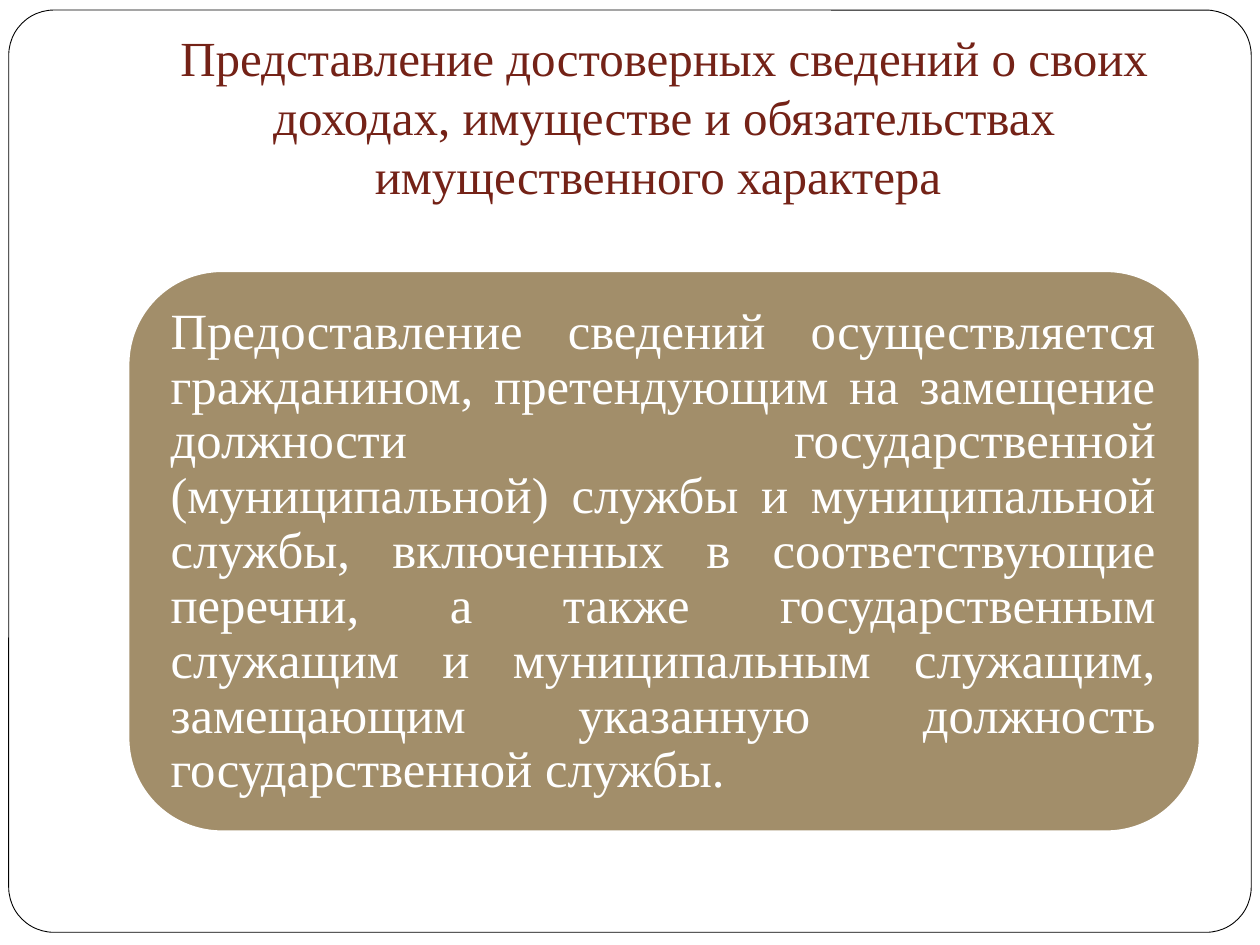
"""Build a slide on reporting income, property and liabilities."""
from pptx import Presentation
from pptx.dml.color import RGBColor
from pptx.enum import shapes, text
from pptx.util import Pt

FONT = "Times New Roman"


def color(code):
    return RGBColor.from_string(code)


def write(frame, words, size, ink, align, anchor, pads, lead=None, after=0):
    frame.word_wrap = True
    frame.auto_size = text.MSO_AUTO_SIZE.NONE
    frame.vertical_anchor = anchor
    frame.margin_left, frame.margin_top, frame.margin_right, frame.margin_bottom = map(Pt, pads)
    para = frame.paragraphs[0]
    para.alignment = align
    para.space_after = Pt(after)
    if lead:
        para.line_spacing = lead
    run = para.add_run()
    run.text = words
    run.font.name = FONT
    run.font.size = Pt(size)
    run.font.color.rgb = color(ink)


deck = Presentation()
deck.slide_width, deck.slide_height = Pt(720), Pt(540)
slide = deck.slides.add_slide(deck.slide_layouts[5])
title = slide.shapes.title

panels = [
    ((5, 5.75, 710, 527), 0.049, "FFFFFF", "000000", 0.5),
    ((73.5, 155, 612, 320), 0.1667, "A28E6A", "FFFFFF", 1),
]
for box, curve, fill, edge, width in panels:
    panel = slide.shapes.add_shape(shapes.MSO_SHAPE.ROUNDED_RECTANGLE, *map(Pt, box))
    panel.adjustments[0] = curve
    panel.shadow.inherit = False
    panel.fill.solid()
    panel.fill.fore_color.rgb = color(fill)
    panel.line.color.rgb = color(edge)
    panel.line.width = Pt(width)

tree = title.element.getparent()
tree.remove(title.element)
tree.insert(3, title.element)

title.left, title.top, title.width, title.height = map(Pt, (73.5, 34, 612, 90))
write(
    title.text_frame,
    "Представление достоверных сведений о своих доходах, имуществе и "
    "обязательствах имущественного характера ",
    28, "742217", text.PP_ALIGN.CENTER, text.MSO_ANCHOR.BOTTOM, (7.2, 3.6, 7.2, 7.2),
)

body = slide.shapes.add_textbox(*map(Pt, (88.75, 170.75, 581, 289.5)))
write(
    body.text_frame,
    "Предоставление сведений осуществляется гражданином, претендующим на "
    "замещение должности государственной (муниципальной) службы и "
    "муниципальной службы, включенных в соответствующие перечни, а также "
    "государственным служащим и муниципальным служащим, замещающим указанную "
    "должность государственной службы. ",
    29, "FFFFFF", text.PP_ALIGN.JUSTIFY, text.MSO_ANCHOR.MIDDLE, (8.75,) * 4,
    lead=0.9, after=10,
)

deck.save("out.pptx")
